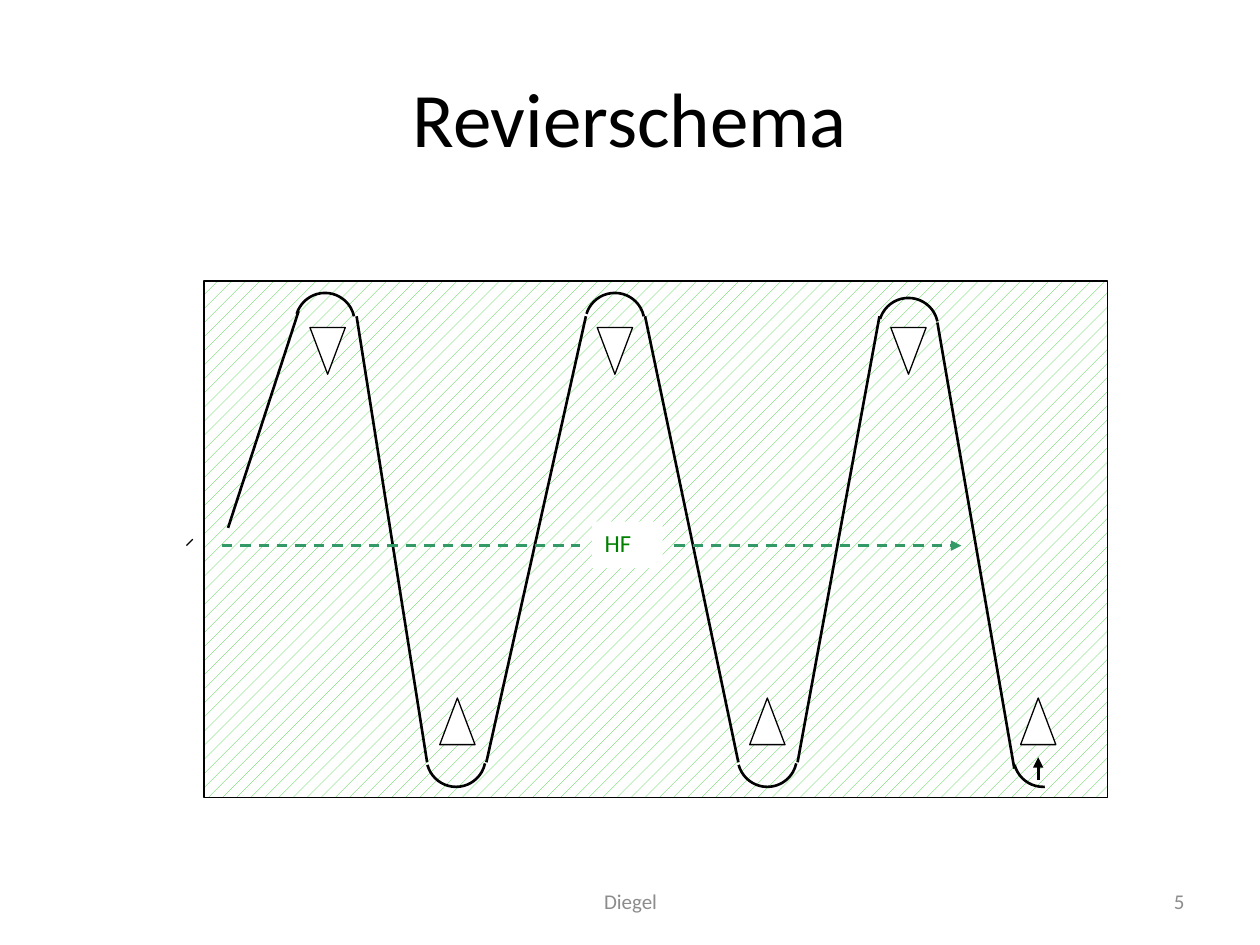
"""Build the search pattern slide 'Revierschema'."""
from lxml.etree import SubElement
from pptx import Presentation
from pptx.dml.color import RGBColor
from pptx.enum.dml import MSO_LINE, MSO_PATTERN
from pptx.enum.shapes import MSO_CONNECTOR, MSO_SHAPE
from pptx.enum.text import MSO_ANCHOR, PP_ALIGN
from pptx.oxml.ns import qn
from pptx.util import Inches, Pt

COLS, ROWS = 100, 75
WIDTH, HEIGHT = Inches(10), Inches(7.5)


class Theme:
    font = "Calibri"
    ink = RGBColor(0x00, 0x00, 0x00)
    paper = RGBColor(0xFF, 0xFF, 0xFF)
    hatch = RGBColor(0x33, 0xCC, 0x33)
    axis = RGBColor(0x33, 0x99, 0x66)
    label = RGBColor(0x00, 0x80, 0x00)
    footer = RGBColor(0x8C, 0x8C, 0x8C)
    title_size, label_size, footer_size = Pt(44), Pt(14), Pt(12)
    thin, thick = Pt(0.75), Pt(1.5)


def col(n):
    """Return the length of n grid columns."""
    return round(WIDTH * n / COLS)


def row(n):
    """Return the length of n grid rows."""
    return round(HEIGHT * n / ROWS)


def box(x, y, w, h):
    """Return a grid box as left, top, width and height."""
    return col(x), row(y), col(w), row(h)


def apply(target, values):
    """Set each attribute named in values on target."""
    for name, value in values.items():
        setattr(target, name, value)


def write(sp, text, size, color, align, anchor):
    """Write one formatted line of text into a shape."""
    tf = sp.text_frame
    apply(tf, {"word_wrap": True, "vertical_anchor": anchor})
    p = tf.paragraphs[0]
    p.alignment = align
    r = p.add_run()
    r.text = text
    apply(r.font, {"name": Theme.font, "size": size})
    r.font.color.rgb = color


def add_text(s, area, text, size, color, align):
    """Add a text box with vertically centred text."""
    sp = s.shapes.add_textbox(*box(*area))
    write(sp, text, size, color, align, MSO_ANCHOR.MIDDLE)


def add_outline(s, kind, area, width=None, fill=None):
    """Add a preset shape with an optional line and fill."""
    sp = s.shapes.add_shape(kind, *box(*area))
    sp.shadow.inherit = False
    if fill is None:
        sp.fill.background()
    else:
        sp.fill.solid()
        sp.fill.fore_color.rgb = fill
    if width is None:
        sp.line.fill.background()
    else:
        sp.line.color.rgb = Theme.ink
        sp.line.width = width
    return sp


def add_field(s):
    """Add the hatched search area."""
    sp = add_outline(s, MSO_SHAPE.RECTANGLE, (16.2, 22.3, 71.7, 41), Theme.thin)
    sp.fill.patterned()
    sp.fill.pattern = MSO_PATTERN.PERCENT_10
    sp.fill.fore_color.rgb = Theme.hatch
    sp.fill.back_color.rgb = Theme.paper


def add_marker(s, x, y, rotation):
    """Add a triangular hide marker."""
    sp = add_outline(s, MSO_SHAPE.ISOSCELES_TRIANGLE, (x, y, 2.8, 3.7), Theme.thin, Theme.paper)
    sp.rotation = rotation


def add_turn(s, x, y, start, end, radius=2.35):
    """Add a clockwise arc around a centre, with angles in degrees."""
    area = (x - radius, y - radius, 2 * radius, 2 * radius)
    sp = add_outline(s, MSO_SHAPE.ARC, area, Theme.thick)
    for i, angle in enumerate((start, end)):
        sp.adjustments[i] = angle * 0.6


def add_line(s, start, end, color=Theme.ink, width=Theme.thick, dash=None, arrow=False):
    """Add a straight line, optionally dashed or with an arrowhead."""
    c = s.shapes.add_connector(
        MSO_CONNECTOR.STRAIGHT, col(start[0]), row(start[1]), col(end[0]), row(end[1]))
    c.line.color.rgb = color
    apply(c.line, {"width": width, "dash_style": dash})
    if arrow:
        SubElement(c.line._get_or_add_ln(), qn("a:tailEnd"), type="triangle")
    SubElement(c._element.spPr, qn("a:effectLst"))


def add_path(s):
    """Add the winding path with its turns and straight legs."""
    for x, y in ((25.8, 25.6), (48.8, 25.6), (72.1, 26)):
        add_turn(s, x, y, 197, 348)
    for x, start in ((36.2, 12), (60.9, 12), (82.8, 87)):
        add_turn(s, x, 60.1, start, 165)
    legs = (
        ((18.1, 41.9), (23.7, 24.7)),
        ((33.9, 60.5), (28.3, 25.1)),
        ((38.6, 60.5), (46.5, 25.1)),
        ((58.6, 60.5), (51.2, 25.1)),
        ((63.3, 60.5), (69.8, 25.1)),
        ((80.5, 61), (74.4, 25.6)),
    )
    for start, end in legs:
        add_line(s, start, end)
    add_line(s, (82.4, 61.9), (82.4, 60.1), arrow=True)


def add_axis(s):
    """Add the dashed handler line with its label."""
    y = 43.3
    add_line(s, (14.8, y), (15.3, y - 0.5), width=Theme.thin)
    add_line(s, (17.6, y), (46, y), Theme.axis, dash=MSO_LINE.DASH)
    sp = add_outline(s, MSO_SHAPE.RECTANGLE, (47, 41.4, 5.6, 3.7), fill=Theme.paper)
    write(sp, "HF", Theme.label_size, Theme.label, PP_ALIGN.LEFT, MSO_ANCHOR.TOP)
    add_line(s, (53.5, y), (76.3, y), Theme.axis, dash=MSO_LINE.DASH, arrow=True)


def main():
    """Build and save the slide."""
    prs = Presentation()
    apply(prs, {"slide_width": WIDTH, "slide_height": HEIGHT})
    s = prs.slides.add_slide(prs.slide_layouts[6])
    add_text(s, (5, 3, 90, 12.5), "Revierschema", Theme.title_size, Theme.ink, PP_ALIGN.CENTER)
    add_field(s)
    for y, rotation, xs in ((26, 180, (24.6, 47.4, 70.7)), (55.4, 0, (34.9, 59.5, 81))):
        for x in xs:
            add_marker(s, x, y, rotation)
    add_path(s)
    add_axis(s)
    for area, text, align in (
        ((71.7, 69.5, 23.3, 4), "5", PP_ALIGN.RIGHT),
        ((34.2, 69.5, 31.7, 4), "Diegel", PP_ALIGN.CENTER),
    ):
        add_text(s, area, text, Theme.footer_size, Theme.footer, align)
    prs.save("out.pptx")


if __name__ == "__main__":
    main()
